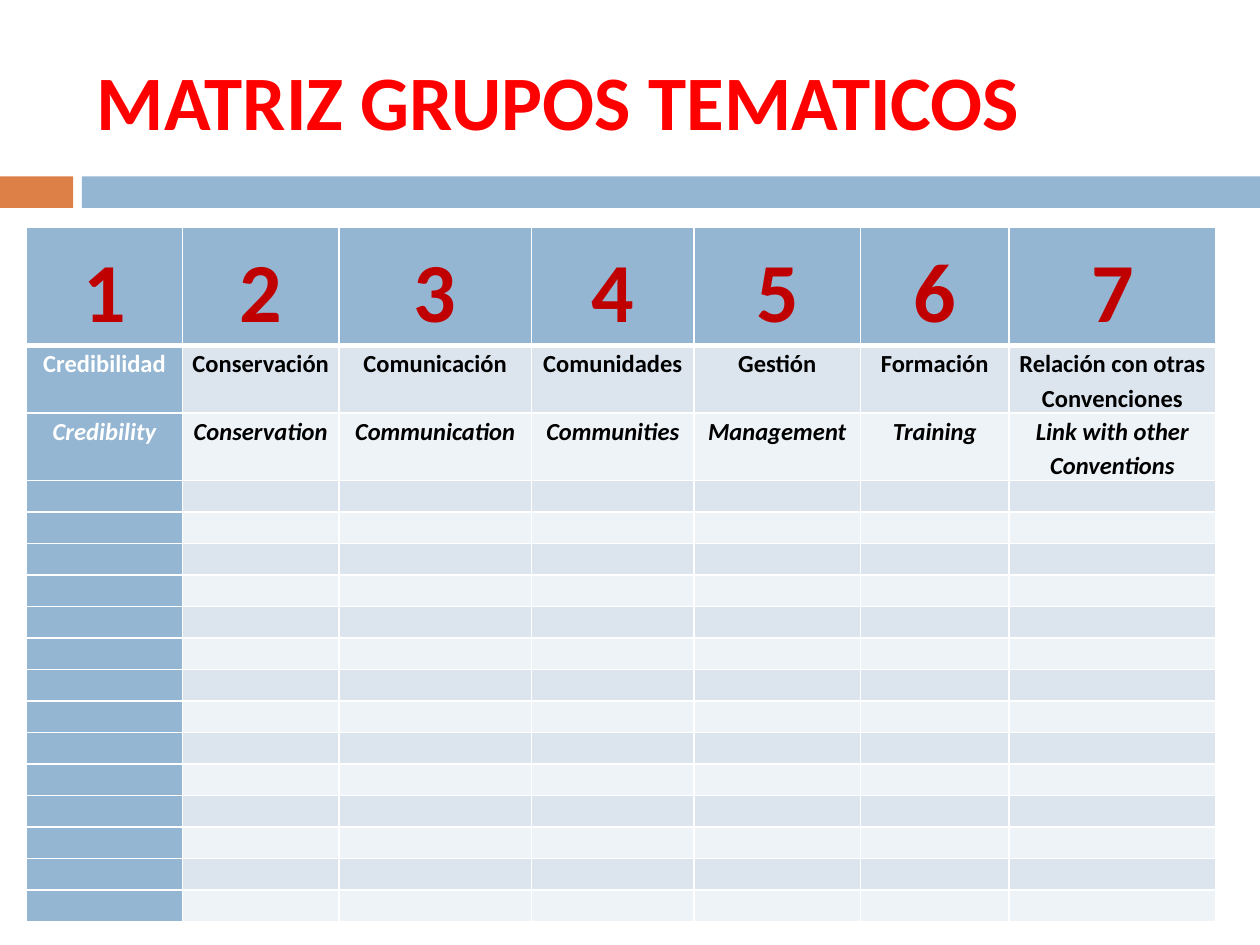
from dataclasses import dataclass

from lxml.etree import SubElement
from pptx import Presentation
from pptx.dml.color import RGBColor
from pptx.enum.shapes import MSO_SHAPE
from pptx.enum.text import MSO_ANCHOR, PP_ALIGN
from pptx.oxml import parse_xml
from pptx.oxml.ns import nsdecls, qn
from pptx.util import Inches, Pt


@dataclass(frozen=True)
class Theme:
    font: str = "Calibri"
    orange: str = "DD8047"
    blue: str = "94B6D2"
    band_dark: str = "DCE5EE"
    band_light: str = "EEF3F7"
    title: str = "FF0000"
    number: str = "C00000"
    black: str = "000000"
    white: str = "FFFFFF"
    title_size: int = 44
    number_size: int = 48
    label_size: int = 14
    empty_size: int = 11


THEME = Theme()

SPANISH = ["Credibilidad", "Conservación", "Comunicación", "Comunidades",
           "Gestión", "Formación", "Relación con otras Convenciones"]
ENGLISH = ["Credibility", "Conservation", "Communication", "Communities",
           "Management", "Training", "Link with other Conventions"]
NUMBERS = [str(number) for number in range(1, len(SPANISH) + 1)]
EMPTY_ROWS = 14
ROWS = [NUMBERS, SPANISH, ENGLISH] + [[""] * len(SPANISH)] * EMPTY_ROWS
COLUMN_WIDTHS = [1.24, 1.24, 1.53, 1.29, 1.32, 1.18, 1.64]
ROW_HEIGHTS = [0.94, 0.49, 0.49] + [0.25] * EMPTY_ROWS


def style_text(paragraph, size, color, italic=False):
    for run in paragraph.runs:
        font = run.font
        font.name = THEME.font
        font.size = Pt(size)
        font.bold = True
        font.italic = italic
        font.color.rgb = RGBColor.from_string(color)


def add_bar(slide, left, width, color):
    shape = slide.shapes.add_shape(
        MSO_SHAPE.RECTANGLE, Inches(left), Inches(1.4), Inches(width), Inches(0.25))
    shape.shadow.inherit = False
    shape.fill.solid()
    shape.fill.fore_color.rgb = RGBColor.from_string(color)
    shape.line.fill.background()


def add_title(slide, text):
    box = slide.shapes.add_textbox(
        Inches(0.67), Inches(0.25), Inches(8.92), Inches(1.08))
    text_frame = box.text_frame
    text_frame.word_wrap = True
    text_frame.vertical_anchor = MSO_ANCHOR.MIDDLE
    text_frame.text = text
    style_text(text_frame.paragraphs[0], THEME.title_size, THEME.title)


def set_borders(cell, row):
    """Thin white lines, with a heavy one under the number row."""
    widths = {"L": 1, "R": 1, "T": 3 if row == 1 else 1, "B": 3 if row == 0 else 1}
    properties = cell._tc.get_or_add_tcPr()
    for index, (side, width) in enumerate(widths.items()):
        properties.insert(index, parse_xml(
            f'<a:ln{side} {nsdecls("a")} w="{Pt(width)}"><a:solidFill>'
            f'<a:srgbClr val="{THEME.white}"/></a:solidFill></a:ln{side}>'))


def fill_cell(cell, row, column, text):
    # Background and borders
    if row == 0 or column == 0:
        background = THEME.blue
    else:
        background = THEME.band_dark if row % 2 else THEME.band_light
    cell.fill.solid()
    cell.fill.fore_color.rgb = RGBColor.from_string(background)
    set_borders(cell, row)
    cell.margin_left = cell.margin_right = Inches(0.07)
    cell.margin_top = cell.margin_bottom = 0

    # Text
    paragraph = cell.text_frame.paragraphs[0]
    paragraph.alignment = PP_ALIGN.CENTER
    paragraph.line_spacing = 1.15
    if not text:
        # Small type keeps an empty row at its height
        SubElement(paragraph._p, qn("a:endParaRPr"), sz=str(THEME.empty_size * 100))
        return
    paragraph.text = text
    if row == 0:
        style_text(paragraph, THEME.number_size, THEME.number)
    else:
        color = THEME.white if column == 0 else THEME.black
        style_text(paragraph, THEME.label_size, color, italic=row == 2)


def add_matrix(slide):
    table = slide.shapes.add_table(
        len(ROWS), len(COLUMN_WIDTHS),
        Inches(0.21), Inches(1.8), Inches(9.44), Inches(5.44)).table
    table.first_col = True
    for column, width in zip(table.columns, COLUMN_WIDTHS):
        column.width = Inches(width)
    for row, height in zip(table.rows, ROW_HEIGHTS):
        row.height = Inches(height)
    for row, texts in enumerate(ROWS):
        for column, text in enumerate(texts):
            fill_cell(table.cell(row, column), row, column, text)


def main():
    presentation = Presentation()
    presentation.slide_width = Inches(10)
    presentation.slide_height = Inches(7.5)
    slide = presentation.slides.add_slide(presentation.slide_layouts[6])

    # Divider bars
    add_bar(slide, 0, 0.58, THEME.orange)
    add_bar(slide, 0.65, 9.35, THEME.blue)

    # Title and matrix of thematic groups
    add_title(slide, "MATRIZ GRUPOS TEMATICOS")
    add_matrix(slide)

    presentation.save("out.pptx")


if __name__ == "__main__":
    main()
